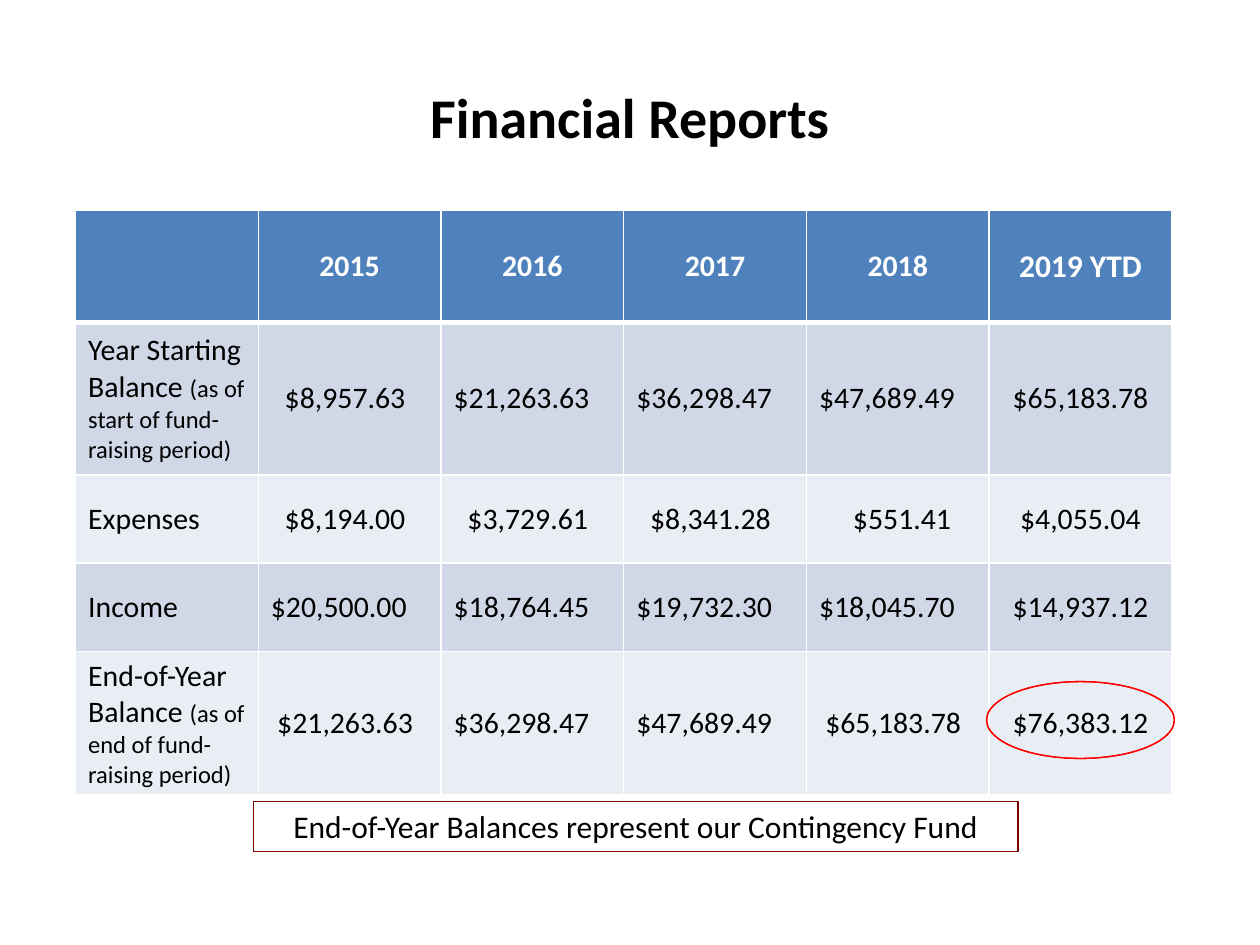
from dataclasses import dataclass

from lxml.etree import SubElement
from pptx import Presentation
from pptx.dml.color import RGBColor
from pptx.enum.shapes import MSO_SHAPE
from pptx.enum.text import MSO_ANCHOR, PP_ALIGN
from pptx.oxml.ns import qn
from pptx.util import Inches, Pt


@dataclass(frozen=True)
class Theme:
    font: str = "Calibri"
    ink: str = "000000"
    white: str = "FFFFFF"
    header: str = "4F81BD"
    bands: tuple = ("D0D8E8", "E9EDF4")
    note_line: str = "800000"
    highlight: str = "FF0000"
    title_size: float = 32
    large_size: float = 18
    cell_size: float = 17
    detail_size: float = 14
    line_width: float = 0.75
    border_width: float = 1
    header_rule: float = 3


HEADINGS = ["", "2015", "2016", "2017", "2018", "2019 YTD"]
# Row label, small print, amounts
BALANCES = [
    ("Year Starting Balance ", "(as of start of fund-raising period)",
     ["$8,957.63", "$21,263.63", "$36,298.47", "$47,689.49", "$65,183.78"]),
    ("Expenses", "",
     ["$8,194.00", "$3,729.61", "$8,341.28", "$551.41", "$4,055.04"]),
    ("Income", "",
     ["$20,500.00", "$18,764.45", "$19,732.30", "$18,045.70", "$14,937.12"]),
    ("End-of-Year Balance ", "(as of end of fund-raising period)",
     ["$21,263.63", "$36,298.47", "$47,689.49", "$65,183.78", "$76,383.12"]),
]
ROW_HEIGHTS = [0.89, 1.21, 0.7, 0.7, 1.13]
COLUMN_WIDTH = 1.45
CELL_MARGIN = 0.1
# Extra indent of amounts, by character count
INDENTS = {7: 0.27, 9: 0.11, 10: 0}
# Slightly indented end-of-year amounts, by (row, column)
NUDGES = {(4, 1): 0.05, (4, 4): 0.05}


class FinancialSlide:
    def __init__(self, deck, theme):
        self.theme = theme
        self.slide = deck.slides.add_slide(deck.slide_layouts[5])

    def style(self, paragraph, size, color=None, bold=False, align=PP_ALIGN.LEFT):
        paragraph.alignment = align
        font = paragraph.font
        font.name, font.size, font.bold = self.theme.font, Pt(size), bold
        font.color.rgb = RGBColor.from_string(color or self.theme.ink)

    def outline(self, shape, color):
        shape.line.color.rgb = RGBColor.from_string(color)
        shape.line.width = Pt(self.theme.line_width)

    def title(self, text, left, top, width, height):
        title = self.slide.shapes.title
        title.left, title.top = Inches(left), Inches(top)
        title.width, title.height = Inches(width), Inches(height)
        title.text_frame.text = text
        title.text_frame.vertical_anchor = MSO_ANCHOR.MIDDLE
        self.style(title.text_frame.paragraphs[0], self.theme.title_size,
                   bold=True, align=PP_ALIGN.CENTER)

    def note(self, text, left, top, width, height):
        note = self.slide.shapes.add_textbox(
            Inches(left), Inches(top), Inches(width), Inches(height))
        self.outline(note, self.theme.note_line)
        note.text_frame.word_wrap = True
        note.text_frame.text = text
        self.style(note.text_frame.paragraphs[0], self.theme.large_size,
                   align=PP_ALIGN.CENTER)

    def ring(self, left, top, width, height):
        ring = self.slide.shapes.add_shape(
            MSO_SHAPE.DONUT, Inches(left), Inches(top), Inches(width), Inches(height))
        ring.adjustments[0] = 0
        ring.shadow.inherit = False
        ring.fill.solid()
        ring.fill.fore_color.rgb = RGBColor.from_string(self.theme.header)
        self.outline(ring, self.theme.highlight)

    def borders(self, cell, top, bottom):
        properties = cell._tc.get_or_add_tcPr()
        side = self.theme.border_width
        for tag, width in (("lnL", side), ("lnR", side), ("lnT", top), ("lnB", bottom)):
            line = SubElement(properties, qn(f"a:{tag}"), w=str(Pt(width)))
            fill = SubElement(line, qn("a:solidFill"))
            SubElement(fill, qn("a:srgbClr"), val=self.theme.white)

    def cell(self, cell, row, text, fill, size, detail="", indent=0, **style):
        thin, thick = self.theme.border_width, self.theme.header_rule
        self.borders(cell, thick if row == 1 else thin, thick if row == 0 else thin)
        cell.fill.solid()
        cell.fill.fore_color.rgb = RGBColor.from_string(fill)
        cell.vertical_anchor = MSO_ANCHOR.MIDDLE
        cell.margin_left = Inches(CELL_MARGIN + indent)
        paragraph = cell.text_frame.paragraphs[0]
        self.style(paragraph, size, **style)
        if text:
            paragraph.add_run().text = text
        if detail:
            small_print = paragraph.add_run()
            small_print.text = detail
            small_print.font.size = Pt(self.theme.detail_size)

    def table(self, left, top):
        theme = self.theme
        table = self.slide.shapes.add_table(
            len(ROW_HEIGHTS), len(HEADINGS), Inches(left), Inches(top),
            Inches(COLUMN_WIDTH * len(HEADINGS)), Inches(sum(ROW_HEIGHTS))).table
        for column in table.columns:
            column.width = Inches(COLUMN_WIDTH)
        for row, height in zip(table.rows, ROW_HEIGHTS):
            row.height = Inches(height)

        # Header row
        last = len(HEADINGS) - 1
        for col, heading in enumerate(HEADINGS):
            self.cell(table.cell(0, col), 0, heading, theme.header,
                      theme.large_size if col == last else theme.cell_size,
                      color=theme.white, bold=True, align=PP_ALIGN.CENTER)

        # Banded body rows
        for row, (label, detail, amounts) in enumerate(BALANCES, start=1):
            band = theme.bands[(row - 1) % 2]
            self.cell(table.cell(row, 0), row, label, band, theme.cell_size, detail)
            for col, amount in enumerate(amounts, start=1):
                current = col == last
                indent = NUDGES.get((row, col), INDENTS[len(amount)])
                self.cell(table.cell(row, col), row, amount, band, theme.cell_size,
                          indent=0 if current else indent,
                          align=PP_ALIGN.CENTER if current else PP_ALIGN.LEFT)


def main():
    deck = Presentation()
    deck.slide_width, deck.slide_height = Inches(10), Inches(7.5)
    report = FinancialSlide(deck, Theme())
    report.title("Financial Reports", 0.5, 0.3, 9, 1.25)
    report.note("End-of-Year Balances represent our Contingency Fund",
                2.01, 6.36, 6.07, 0.4)
    report.table(0.6, 1.67)
    # Ring around the latest balance
    report.ring(7.83, 5.41, 1.49, 0.61)
    deck.save("out.pptx")


if __name__ == "__main__":
    main()
